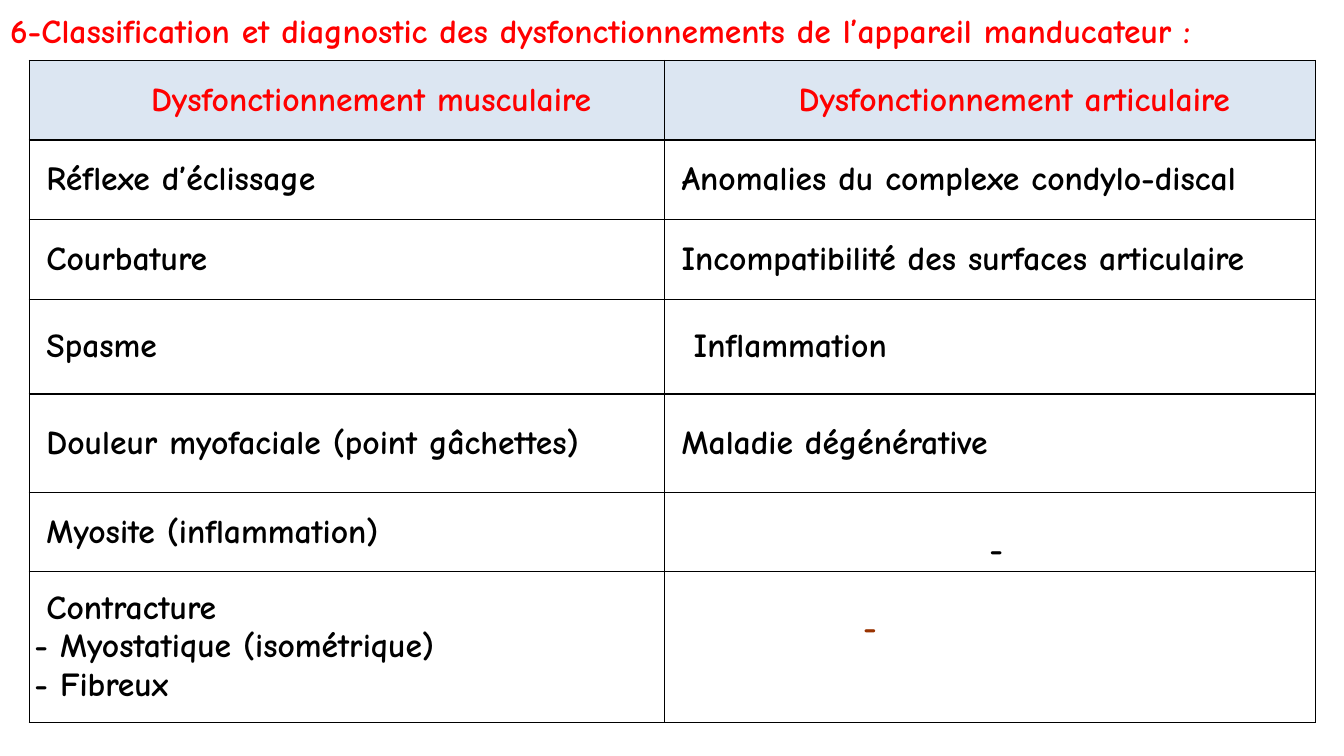
from lxml import etree
from pptx import Presentation
from pptx.dml.color import RGBColor
from pptx.enum.text import MSO_ANCHOR, MSO_AUTO_SIZE, PP_ALIGN
from pptx.oxml.ns import qn
from pptx.util import Inches, Pt

LEFT, CENTER = PP_ALIGN.LEFT, PP_ALIGN.CENTER
TOP, MIDDLE = MSO_ANCHOR.TOP, MSO_ANCHOR.MIDDLE
NO_AUTOFIT = MSO_AUTO_SIZE.NONE
RED, BLACK, BROWN, PALE_BLUE = "FF0000", "000000", "993300", "DCE6F2"
STEP = 0.12  # small text indent, in inches


def add_text(para, text, color, align=LEFT, indent=0):
    para.alignment = align
    properties = para._p.get_or_add_pPr()
    properties.set("marL", str(Inches(indent)))
    properties.set("indent", "0")
    span = para.add_run()
    span.text = text
    span.font.name = "Comic Neue"
    span.font.size = Pt(24)
    span.font.bold = True
    span.font.color.rgb = RGBColor.from_string(color)


def add_borders(cell):
    properties = cell._tc.get_or_add_tcPr()
    for side in ("lnL", "lnR", "lnT", "lnB"):
        line = etree.SubElement(properties, qn(f"a:{side}"), w=str(Pt(1)))
        fill = etree.SubElement(line, qn("a:solidFill"))
        etree.SubElement(fill, qn("a:srgbClr"), val=BLACK)


deck = Presentation()
deck.slide_width, deck.slide_height = Inches(13.33), Inches(7.5)
page = deck.slides.add_slide(deck.slide_layouts[5])

# Title
title = page.shapes.title
title.left, title.top = Inches(0), Inches(0.05)
title.width, title.height = Inches(13.52), Inches(0.5)
frame = title.text_frame
frame.word_wrap = True
frame.auto_size = NO_AUTOFIT
frame.vertical_anchor = MIDDLE
add_text(frame.paragraphs[0],
         "6-Classification et diagnostic des dysfonctionnements de l’appareil manducateur\u00a0:", RED)

# Table contents: each cell is a list of (text, indent) lines
rows = [
    (0.79, [("Dysfonctionnement musculaire", 4 * STEP)],
     [("Dysfonctionnement articulaire", 4 * STEP)]),
    (0.79, [("Réflexe d’éclissage", STEP)],
     [("Anomalies du complexe condylo-discal", STEP)]),
    (0.79, [("Courbature", STEP)],
     [("Incompatibilité des surfaces articulaire", STEP)]),
    (0.94, [("Spasme", STEP)], [("Inflammation", 2 * STEP)]),
    (0.98, [("Douleur myofaciale (point gâchettes)", STEP)],
     [("Maladie dégénérative", STEP)]),
    (0.78, [("Myosite (inflammation)", STEP)], [("-", STEP)]),
    (1.5, [("Contracture", STEP), ("- Myostatique (isométrique)", 0), ("- Fibreux", 0)],
     [("-", 16 * STEP)]),
]
HEADER, MYOSITIS, CONTRACTURE = 0, 5, 6

# Table
table = page.shapes.add_table(len(rows), 2, Inches(0.29), Inches(0.6),
                              Inches(12.76), Inches(6.57)).table
table.first_row = table.horz_banding = False
for column, width in zip(table.columns, (6.3, 6.46)):
    column.width = Inches(width)

for r, (height, *contents) in enumerate(rows):
    table.rows[r].height = Inches(height)
    for c, lines in enumerate(contents):
        cell = table.cell(r, c)
        add_borders(cell)
        if r == HEADER:
            cell.fill.solid()
            cell.fill.fore_color.rgb = RGBColor.from_string(PALE_BLUE)
        else:
            cell.fill.background()

        # The lone dashes sit one line below the top of their cells
        lone_dash = c == 1 and r >= MYOSITIS
        cell.vertical_anchor = TOP if lone_dash else MIDDLE
        cell.margin_left = cell.margin_right = Inches(0.05)
        cell.margin_top = Inches(0.38 if lone_dash else 0)
        cell.margin_bottom = Inches(0)

        color = RED if r == HEADER else BLACK
        if lone_dash and r == CONTRACTURE:
            color = BROWN
        centered = r == HEADER or (lone_dash and r == MYOSITIS)
        for i, (text, indent) in enumerate(lines):
            frame = cell.text_frame
            para = frame.add_paragraph() if i else frame.paragraphs[0]
            add_text(para, text, color, CENTER if centered else LEFT, indent)

deck.save("out.pptx")
